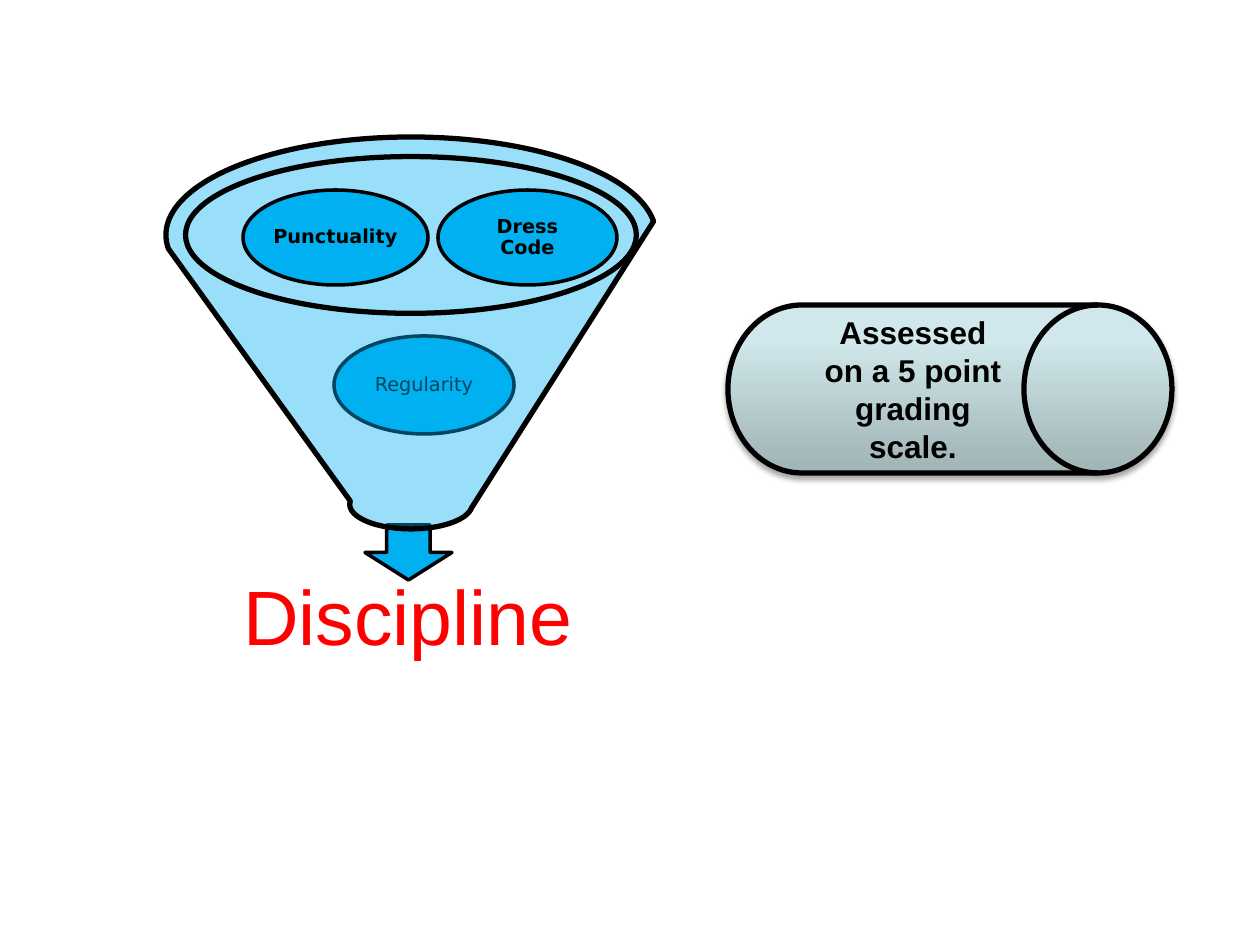
from lxml import etree
from pptx import Presentation
from pptx.dml.color import RGBColor
from pptx.enum.shapes import MSO_SHAPE as Preset
from pptx.enum.text import MSO_ANCHOR as Anchor, PP_ALIGN as Align
from pptx.oxml.ns import qn
from pptx.util import Pt

SCALE = 914400 / 126
BLUE, BLACK, RED = "00B0F0", "000000", "FF0000"
DRUM_STOPS = [(0, "A0B3B5"), (80, "D0E8EB"), (100, "D1EAEC")]
TRAIT_FONT = {"name": "DejaVu Sans", "size": Pt(11)}
RESULT_FONT = {"name": "Arial", "size": Pt(44)}
GRADE_FONT = {"name": "Arial", "size": Pt(18), "bold": True}


def px(length):
    """Turn a pixel length into EMU."""
    return round(length * SCALE)


def paint(color_format, hex_color):
    """Give a colour format an RGB colour."""
    color_format.rgb = RGBColor.from_string(hex_color)


def set_all(target, values):
    """Set each attribute named in a dict of format values."""
    for name, value in values.items():
        setattr(target, name, value)


def add_node(parent, tag, **attributes):
    """Append a drawing element with attributes."""
    values = {name: str(value) for name, value in attributes.items()}
    return etree.SubElement(parent, qn(tag), values)


def draw(slide, preset, box, line=0, opacity=100):
    """Add a blue preset shape with an optional black outline."""
    shape = slide.shapes.add_shape(preset, *map(px, box))
    shape.shadow.inherit = False
    shape.fill.solid()
    paint(shape.fill.fore_color, BLUE)
    if opacity < 100:
        color = shape.fill._xPr.find(".//" + qn("a:srgbClr"))
        add_node(color, "a:alpha", val=opacity * 1000)
    if line:
        shape.line.width = Pt(line)
        paint(shape.line.color, BLACK)
    else:
        shape.line.fill.background()
    return shape


def write(shape, text, font, color=BLACK, inset=3, spacing=0.9):
    """Put centred text in a shape."""
    frame = shape.text_frame
    sides = ("left", "right", "top", "bottom")
    set_all(frame, {f"margin_{side}": px(inset) for side in sides})
    set_all(frame, {"word_wrap": True, "vertical_anchor": Anchor.MIDDLE, "text": text})
    paragraph = frame.paragraphs[0]
    set_all(paragraph, {"alignment": Align.CENTER, "line_spacing": spacing})
    for run in paragraph.runs:
        set_all(run.font, font)
        paint(run.font.color, color)


def add_funnel(slide, left, top, width, height):
    """Draw the traits that pass through the funnel into discipline."""
    draw(slide, Preset.OVAL, (left + 20, top + 22, 451, 156), opacity=40)
    draw(slide, Preset.DOWN_ARROW, (left + 199, top + 388, 87, 55), line=2)
    result = slide.shapes.add_textbox(*map(px, (left + 32, top + height - 105, 420, 105)))
    write(result, "Discipline", RESULT_FONT, RED, inset=43)
    traits = [
        ("Dress Code", (272, 53, 179, 95), True),
        ("Punctuality", (77, 53, 185, 95), True),
        ("Regularity", (168, 199, 180, 98), False),
    ]
    for label, (x, y, w, h), bold in traits:
        trait = draw(slide, Preset.OVAL, (left + x, top + y, w, h), line=2)
        write(trait, label, TRAIT_FONT | {"bold": bold})
    draw(slide, Preset.FUNNEL, (left, top, width, 392), line=3, opacity=40)


def add_grading_drum(slide, *box):
    """Draw the shaded drum that states the grading scale."""
    drum = draw(slide, Preset.FLOWCHART_DIRECT_ACCESS_STORAGE, box, line=3)
    drum.fill.gradient()
    properties = drum.fill._xPr
    stops = properties.find(".//" + qn("a:gsLst"))
    for stop in list(stops):
        stops.remove(stop)
    for position, color in DRUM_STOPS:
        stop = add_node(stops, "a:gs", pos=position * 1000)
        add_node(stop, "a:srgbClr", val=color)
    properties.find(".//" + qn("a:lin")).set("ang", str(270 * 60000))
    shadow = add_node(properties.find(qn("a:effectLst")), "a:outerShdw",
                      blurRad=Pt(3.1), dist=Pt(1.8), dir=90 * 60000, rotWithShape=0)
    add_node(add_node(shadow, "a:srgbClr", val=BLACK), "a:alpha", val=35000)
    write(drum, "Assessed\von a 5 point grading scale.", GRADE_FONT, inset=10, spacing=1.0)


def main():
    """Build and save the slide."""
    deck = Presentation()
    set_all(deck, {"slide_width": px(1260), "slide_height": px(945)})
    slide = deck.slides.add_slide(deck.slide_layouts[6])
    add_funnel(slide, 166, 137, 490, 536)
    add_grading_drum(slide, 728, 305, 444, 168)
    deck.save("out.pptx")


if __name__ == "__main__":
    main()
